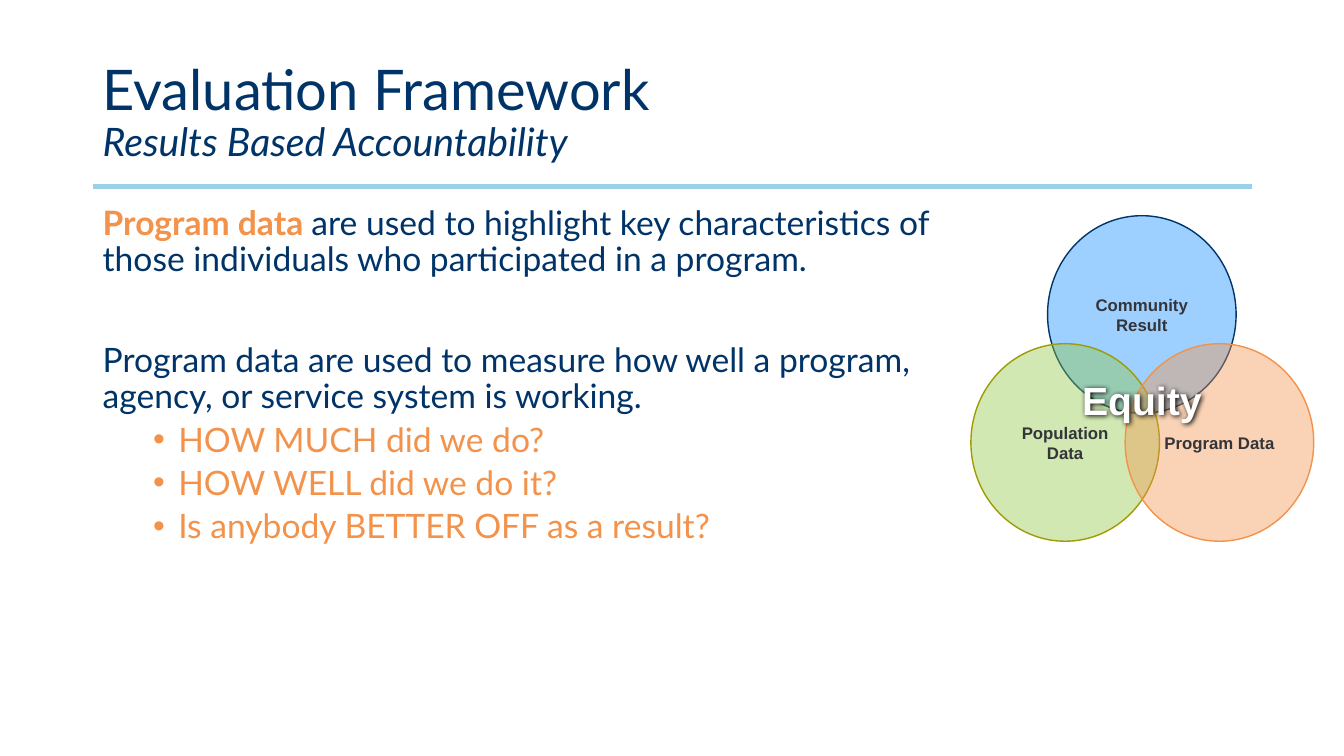
from lxml import etree
from pptx import Presentation
from pptx.dml.color import RGBColor
from pptx.enum.shapes import MSO_CONNECTOR, MSO_SHAPE
from pptx.enum.text import MSO_ANCHOR, PP_ALIGN
from pptx.oxml.ns import qn
from pptx.util import Inches, Pt

COLORS = {
    "navy": "003468", "orange": "F3924A", "rule": "9AD1EA", "label": "333539",
    "white": "FFFFFF", "blue": "0B88FF", "blue_edge": "003567",
    "green": "8EC63F", "green_edge": "9F9B04", "shadow": "000000",
}


def add_span(para, text, size, color, font="Lato", bold=False, italic=False):
    span = para.add_run()
    span.text = text
    span.font.name = font
    span.font.size = Pt(size)
    span.font.bold = bold
    span.font.italic = italic
    span.font.color.rgb = RGBColor.from_string(COLORS[color])


def add_box(page, left, top, width, height, anchor):
    box = page.shapes.add_textbox(Inches(left), Inches(top), Inches(width), Inches(height))
    box.text_frame.word_wrap = True
    box.text_frame.vertical_anchor = anchor
    return box


deck = Presentation()
deck.slide_width = Inches(13.33)
deck.slide_height = Inches(7.5)
page = deck.slides.add_slide(deck.slide_layouts[6])

rule = page.shapes.add_connector(
    MSO_CONNECTOR.STRAIGHT, Inches(0.92), Inches(1.85), Inches(12.42), Inches(1.85))
rule.line.color.rgb = RGBColor.from_string(COLORS["rule"])
rule.line.width = Pt(3)
etree.SubElement(rule._element.spPr, qn("a:effectLst"))

title = add_box(page, 0.92, 0.4, 11.5, 1.45, MSO_ANCHOR.MIDDLE)
para = title.text_frame.paragraphs[0]
para.line_spacing = 0.9
add_span(para, "Evaluation Framework", 40, "navy")
para.add_line_break()
add_span(para, "Results Based Accountability", 28, "navy", italic=True)

body = add_box(page, 0.92, 2, 8.75, 4.73, MSO_ANCHOR.TOP)
para = body.text_frame.paragraphs[0]
para.line_spacing = 0.9
add_span(para, "Program data ", 24, "orange", bold=True)
add_span(para, "are used to highlight key characteristics of those individuals "
         "who participated in a program.", 24, "navy")

para = body.text_frame.add_paragraph()
para.line_spacing = 0.9
para.space_before = Pt(46)
add_span(para, "Program data are used to measure how well a program, agency, "
         "or service system is working.", 24, "navy")

questions = ["HOW MUCH did we do?", "HOW WELL did we do it?",
             "Is anybody BETTER OFF as a result?"]
for question in questions:
    para = body.text_frame.add_paragraph()
    para.level = 1
    para.line_spacing = 0.9
    para.space_before = Pt(5)
    properties = para._p.get_or_add_pPr()
    properties.set("marL", str(Inches(0.75)))
    properties.set("indent", str(Inches(-0.25)))
    etree.SubElement(properties, qn("a:buFont")).set("typeface", "Arial")
    etree.SubElement(properties, qn("a:buChar")).set("char", "•")
    add_span(para, question, 24, "orange")

circles = [
    ("Community Result", 10.39, 2.14, "blue", "blue_edge"),
    ("Population Data", 9.63, 3.41, "green", "green_edge"),
    ("Program Data", 11.16, 3.41, "orange", "orange"),
]
for label, left, top, fill, edge in circles:
    circle = page.shapes.add_shape(
        MSO_SHAPE.OVAL, Inches(left), Inches(top), Inches(1.87), Inches(1.96))
    circle.shadow.inherit = False
    circle.fill.solid()
    circle.fill.fore_color.rgb = RGBColor.from_string(COLORS[fill])
    tint = circle._element.spPr.find(qn("a:solidFill"))[0]
    etree.SubElement(tint, qn("a:alpha")).set("val", "40000")
    circle.line.color.rgb = RGBColor.from_string(COLORS[edge])
    circle.line.width = Pt(1)
    frame = circle.text_frame
    frame.word_wrap = True
    frame.vertical_anchor = MSO_ANCHOR.MIDDLE
    frame.margin_left = frame.margin_right = Inches(0.08)
    para = frame.paragraphs[0]
    para.alignment = PP_ALIGN.CENTER
    add_span(para, label, 12, "label", font="Arial", bold=True)

equity = add_box(page, 10.48, 3.68, 1.69, 0.57, MSO_ANCHOR.TOP)
para = equity.text_frame.paragraphs[0]
para.alignment = PP_ALIGN.CENTER
add_span(para, "Equity", 28, "white", font="Arial", bold=True)
effects = etree.SubElement(equity._element.spPr, qn("a:effectLst"))
shadow = etree.SubElement(effects, qn("a:outerShdw"))
for name, value in [("blurRad", Pt(4)), ("dist", Pt(1)), ("dir", 2700000)]:
    shadow.set(name, str(value))
shade = etree.SubElement(shadow, qn("a:srgbClr"))
shade.set("val", COLORS["shadow"])

deck.save("out.pptx")
